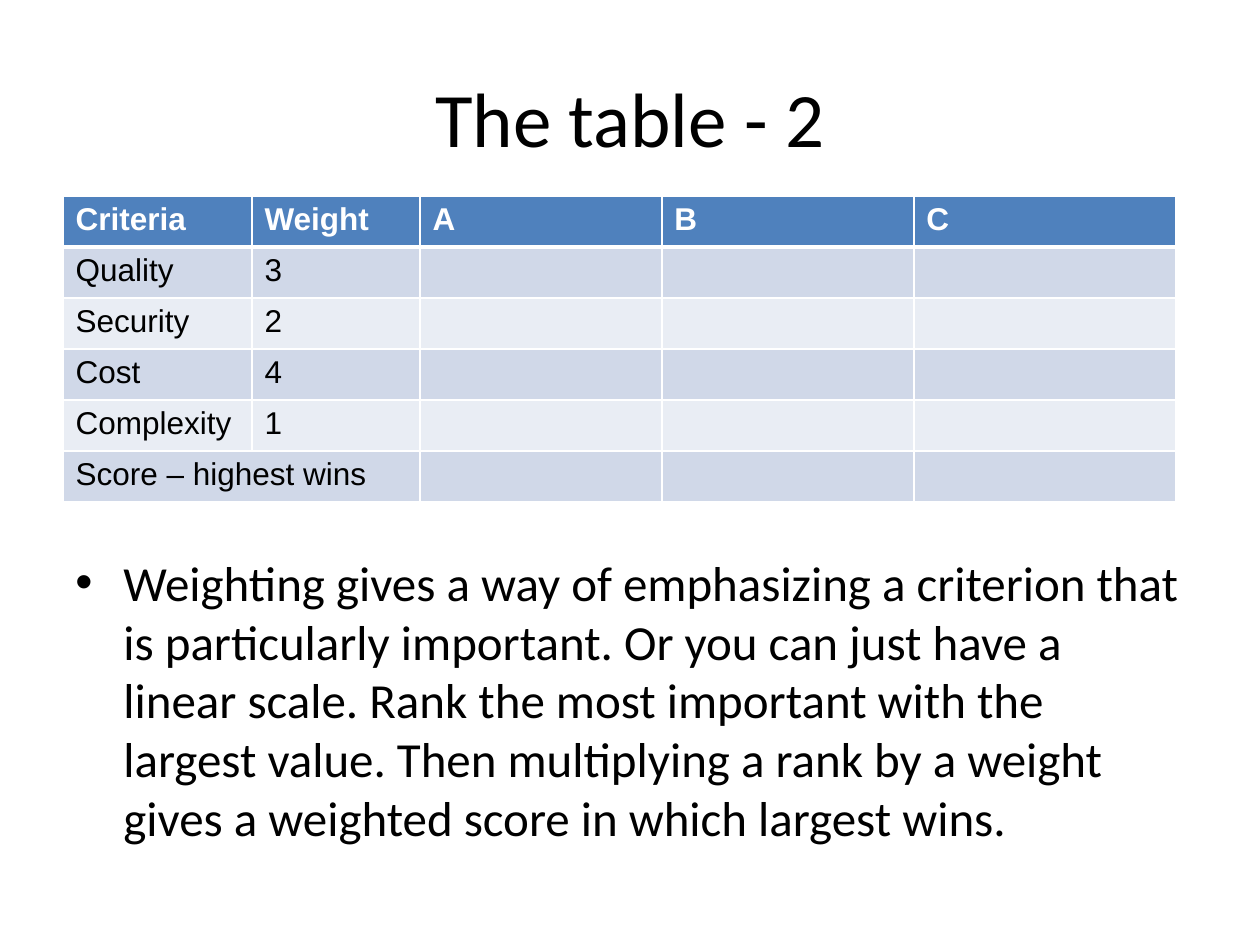
"""Build the weighted criteria table slide."""
import pptx
import pptx.util
import pptx.dml.color
import pptx.enum.text
import pptx.oxml
import pptx.oxml.ns
from lxml import etree

PX = 914400 // 126
TITLE = "The table - 2"
ADVICE = (
    "Weighting gives a way of emphasizing a criterion that is particularly important. "
    "Or you can just have a linear scale. Rank the most important with the largest value. "
    "Then multiplying a rank by a weight gives a weighted score in which largest wins."
)
CRITERIA = [
    ("Criteria", "Weight", "A", "B", "C"),
    ("Quality", "3", "", "", ""),
    ("Security", "2", "", "", ""),
    ("Cost", "4", "", "", ""),
    ("Complexity", "1", "", "", ""),
    ("Score – highest wins", "", "", "", ""),
]
COLUMN_WIDTHS = (189, 168, 242, 252, 262)
ROW_HEIGHT = 51
HEADER_FILL, BAND_FILLS = "4F81BD", ("E9EDF4", "D0D8E8")
BLACK, WHITE = "000000", "FFFFFF"


def px(*lengths):
    return [pptx.util.Emu(length * PX) for length in lengths]


def rgb(value):
    return pptx.dml.color.RGBColor.from_string(value)


def set_font(paragraph, name, size, color, bold=False):
    font = paragraph.font
    font.name, font.size, font.bold = name, pptx.util.Pt(size), bold
    font.color.rgb = rgb(color)


def add_text(slide, box, text, anchor):
    frame = slide.shapes.add_textbox(*px(*box)).text_frame
    frame.word_wrap = True
    frame.vertical_anchor = anchor
    paragraph = frame.paragraphs[0]
    paragraph.text = text
    return paragraph


def add_bullet(paragraph, indent):
    properties = paragraph._p.get_or_add_pPr()
    properties.set("marL", str(indent * PX))
    properties.set("indent", str(-indent * PX))
    for tag, attribute, value in (("a:buFont", "typeface", "Arial"), ("a:buChar", "char", "•")):
        etree.SubElement(properties, pptx.oxml.ns.qn(tag)).set(attribute, value)


def add_borders(cell, widths):
    properties = cell._tc.get_or_add_tcPr()
    for side, width in widths.items():
        properties.append(pptx.oxml.parse_xml(
            f'<a:ln{side} {pptx.oxml.ns.nsdecls("a")} w="{pptx.util.Pt(width)}">'
            f'<a:solidFill><a:srgbClr val="{WHITE}"/></a:solidFill></a:ln{side}>'
        ))


def add_criteria_table(slide, left, top):
    rows, columns = len(CRITERIA), len(COLUMN_WIDTHS)
    size = px(left, top, sum(COLUMN_WIDTHS), rows * ROW_HEIGHT)
    table = slide.shapes.add_table(rows, columns, *size).table
    for column, width in zip(table.columns, px(*COLUMN_WIDTHS)):
        column.width = width
    for r, values in enumerate(CRITERIA):
        table.rows[r].height = px(ROW_HEIGHT)[0]
        header = r == 0
        for c, value in enumerate(values):
            cell = table.cell(r, c)
            cell.text = value
            set_font(cell.text_frame.paragraphs[0], "Arial", 18, WHITE if header else BLACK, header)
            add_borders(cell, {"L": 1, "R": 1, "T": 3 if r == 1 else 1, "B": 3 if header else 1})
            cell.fill.solid()
            cell.fill.fore_color.rgb = rgb(HEADER_FILL if header else BAND_FILLS[r % 2])
    table.cell(rows - 1, 0).merge(table.cell(rows - 1, 1))


def main():
    presentation = pptx.Presentation()
    presentation.slide_width, presentation.slide_height = px(1260, 945)
    slide = presentation.slides.add_slide(presentation.slide_layouts[6])

    title = add_text(slide, (63, 38, 1134, 157), TITLE, pptx.enum.text.MSO_ANCHOR.MIDDLE)
    title.alignment = pptx.enum.text.PP_ALIGN.CENTER
    set_font(title, "Calibri", 44, BLACK)

    advice = add_text(slide, (63, 546, 1132, 299), ADVICE, pptx.enum.text.MSO_ANCHOR.TOP)
    add_bullet(advice, 48)
    set_font(advice, "Calibri", 28, BLACK)

    add_criteria_table(slide, 63, 196)
    presentation.save("out.pptx")


if __name__ == "__main__":
    main()
